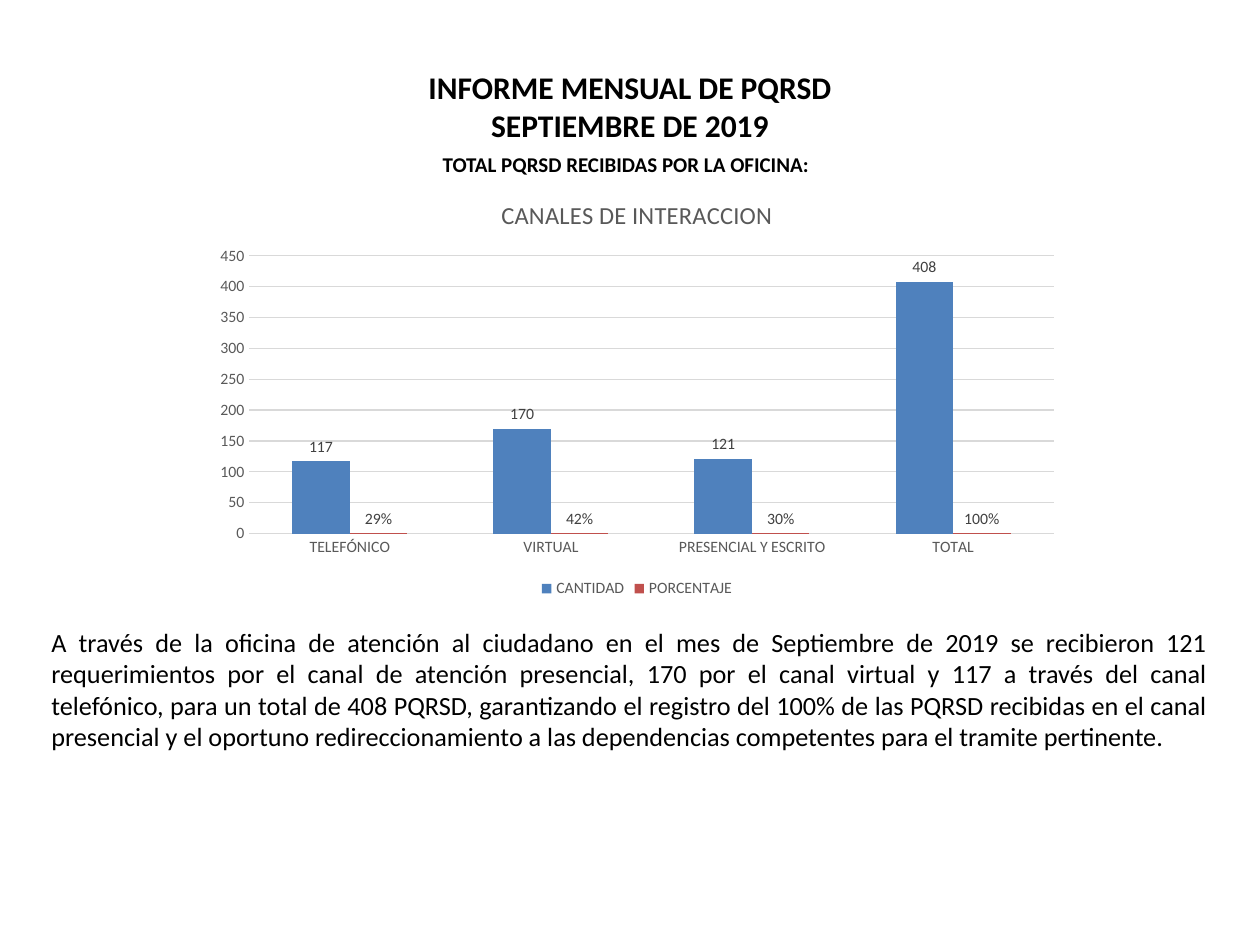
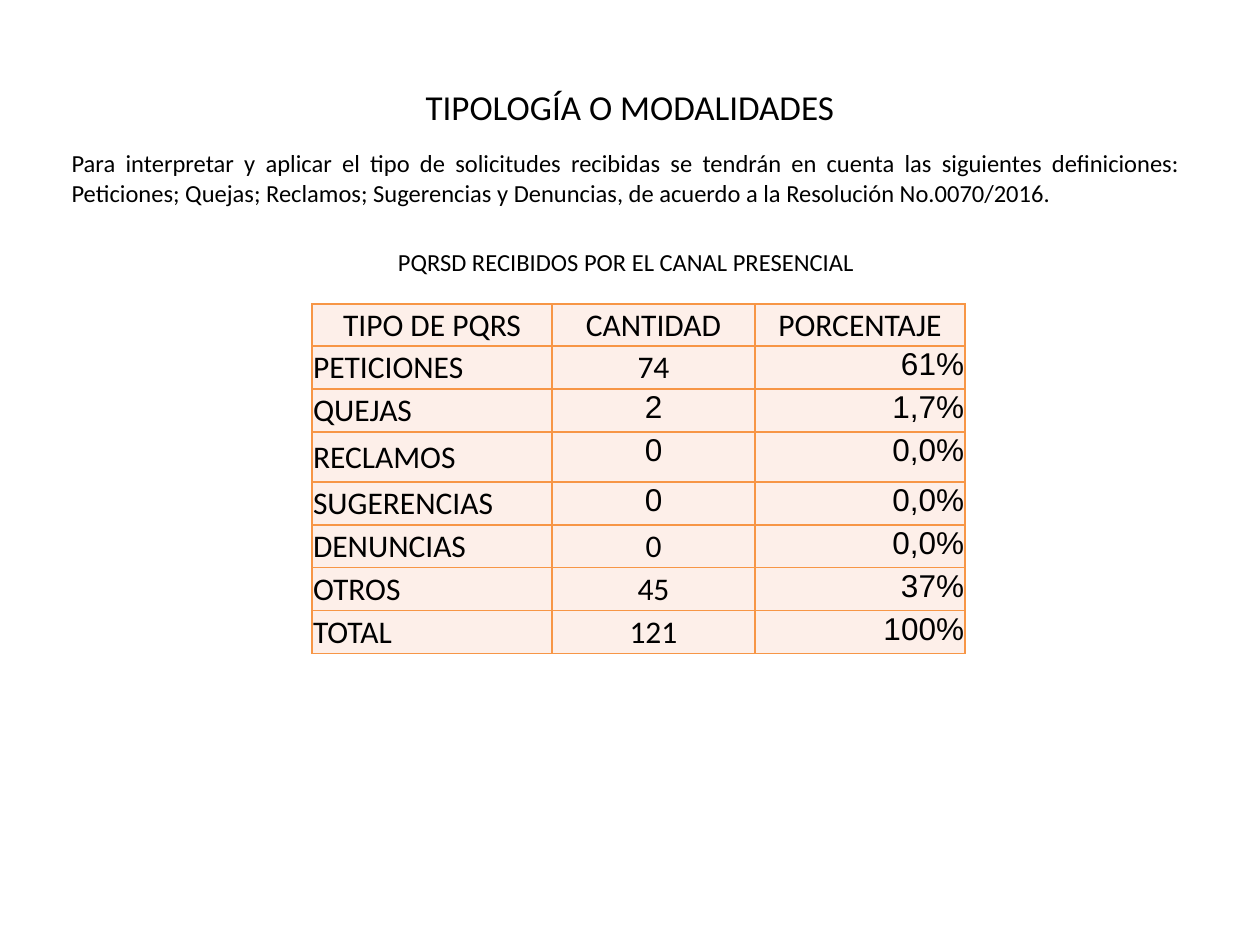
from lxml.etree import SubElement
from pptx import Presentation
from pptx.chart.data import CategoryChartData
from pptx.dml.color import RGBColor
from pptx.enum.chart import XL_CHART_TYPE, XL_LABEL_POSITION, XL_LEGEND_POSITION, XL_TICK_MARK
from pptx.enum.text import MSO_ANCHOR, MSO_AUTO_SIZE, PP_ALIGN
from pptx.oxml.ns import qn
from pptx.util import Pt

EMU_PER_PX = 914400 / 126
FONT = "Calibri"
FIGURE_FONT = "Arial"
COLORS = {
    "text": "000000",
    "chart_text": "595959",
    "label": "404040",
    "grid": "D9D9D9",
    "quantity": "4F81BD",
    "percentage": "C0504D",
    "border": "F79646",
    "cell": "FDEFE9",
}


def px(length):
    return round(length * EMU_PER_PX)


def color(name):
    return RGBColor.from_string(COLORS[name])


def style_font(font, size, color_name="text", name=FONT, bold=False):
    font.name = name
    font.size = Pt(size)
    font.bold = bold
    font.color.rgb = color(color_name)


def place(shape, left, top, width, height):
    shape.left, shape.top = px(left), px(top)
    shape.width, shape.height = px(width), px(height)


def add_slide(presentation, title, title_box, title_size, bold=False):
    slide = presentation.slides.add_slide(presentation.slide_layouts[1])
    place(slide.shapes.title, *title_box)
    frame = slide.shapes.title.text_frame
    frame.text = title
    frame.auto_size = MSO_AUTO_SIZE.NONE
    frame.vertical_anchor = MSO_ANCHOR.MIDDLE
    paragraph = frame.paragraphs[0]
    paragraph.alignment = PP_ALIGN.CENTER
    style_font(paragraph.font, title_size, bold=bold)
    return slide


def fill_body(slide, box, lines, size, bold=False, gap=0):
    body = slide.placeholders[1]
    place(body, *box)
    frame = body.text_frame
    frame.text = "\n".join(text for text, _ in lines)
    frame.auto_size = MSO_AUTO_SIZE.NONE
    for index, (paragraph, (_, alignment)) in enumerate(zip(frame.paragraphs, lines)):
        properties = paragraph._p.get_or_add_pPr()
        properties.set("marL", "0")
        properties.set("indent", "0")
        SubElement(properties, qn("a:buNone"))
        paragraph.alignment = alignment
        paragraph.space_before = Pt(gap if index else 0)
        style_font(paragraph.font, size, bold=bold)


def add_text(slide, box, text, size):
    frame = slide.shapes.add_textbox(*map(px, box)).text_frame
    frame.word_wrap = True
    frame.text = text
    paragraph = frame.paragraphs[0]
    paragraph.alignment = PP_ALIGN.JUSTIFY
    style_font(paragraph.font, size)


def style_axis(axis):
    axis.major_tick_mark = XL_TICK_MARK.NONE
    axis.minor_tick_mark = XL_TICK_MARK.NONE
    axis.format.line.fill.background()
    style_font(axis.tick_labels.font, 9, "chart_text")


def add_column_chart(slide, box, title, categories, series_rows):
    data = CategoryChartData()
    data.categories = categories
    for name, values, number_format, _ in series_rows:
        data.add_series(name, values, number_format)
    chart = slide.shapes.add_chart(XL_CHART_TYPE.COLUMN_CLUSTERED, *map(px, box), data).chart
    style_font(chart.font, 10)

    chart.has_title = True
    chart.chart_title.text_frame.text = title
    style_font(chart.chart_title.text_frame.paragraphs[0].font, 14, "chart_text")
    chart.has_legend = True
    chart.legend.position = XL_LEGEND_POSITION.BOTTOM
    chart.legend.include_in_layout = False
    style_font(chart.legend.font, 9, "chart_text")

    style_axis(chart.category_axis)
    style_axis(chart.value_axis)
    grid_line = chart.value_axis.major_gridlines.format.line
    grid_line.color.rgb = color("grid")
    grid_line.width = Pt(0.75)

    plot = chart.plots[0]
    plot.gap_width = 150
    plot.overlap = 0
    plot.vary_by_categories = False
    for series, (_, _, number_format, color_name) in zip(plot.series, series_rows):
        series.format.fill.solid()
        series.format.fill.fore_color.rgb = color(color_name)
        labels = series.data_labels
        labels.show_value = True
        labels.position = XL_LABEL_POSITION.OUTSIDE_END
        labels.number_format = number_format
        labels.number_format_is_linked = False
        style_font(labels.font, 9, "label")


def add_borders(cell):
    properties = cell._tc.get_or_add_tcPr()
    for side in ("lnL", "lnR", "lnT", "lnB"):
        line = SubElement(properties, qn(f"a:{side}"), w=str(Pt(1)))
        fill = SubElement(line, qn("a:solidFill"))
        SubElement(fill, qn("a:srgbClr"), val=COLORS["border"])


def fill_cell(cell, text, alignment, is_figure):
    add_borders(cell)
    cell.fill.solid()
    cell.fill.fore_color.rgb = color("cell")
    cell.margin_left = cell.margin_right = cell.margin_top = px(1)
    cell.margin_bottom = 0
    cell.vertical_anchor = MSO_ANCHOR.TOP if is_figure else MSO_ANCHOR.MIDDLE
    cell.text = text
    paragraph = cell.text_frame.paragraphs[0]
    paragraph.alignment = alignment
    style_font(paragraph.font, 18, name=FIGURE_FONT if is_figure else FONT)


def add_type_table(slide, left, top, column_widths, row_heights, rows, arial_quantities):
    table = slide.shapes.add_table(
        len(rows), len(column_widths), px(left), px(top),
        px(sum(column_widths)), px(sum(row_heights)),
    ).table
    table.first_row = False
    table.horz_banding = False
    for column, width in zip(table.columns, column_widths):
        column.width = px(width)
    for row, height in zip(table.rows, row_heights):
        row.height = px(height)
    alignments = (PP_ALIGN.LEFT, PP_ALIGN.CENTER, PP_ALIGN.RIGHT)
    for row_index, values in enumerate(rows):
        for column_index, text in enumerate(values):
            is_header = row_index == 0
            is_figure = not is_header and (
                column_index == 2 or column_index == 1 and values[0] in arial_quantities
            )
            alignment = PP_ALIGN.CENTER if is_header else alignments[column_index]
            fill_cell(table.cell(row_index, column_index), text, alignment, is_figure)


def add_channels_slide(presentation):
    slide = add_slide(
        presentation, "INFORME MENSUAL DE PQRSD\vSEPTIEMBRE DE 2019",
        (63, 42, 1134, 127), 18, bold=True,
    )
    fill_body(
        slide, (83, 145, 1086, 33),
        [("TOTAL PQRSD RECIBIDAS POR LA OFICINA:", PP_ALIGN.CENTER)], 12, bold=True,
    )
    add_text(
        slide, (39, 620, 1181, 140),
        "A través de la oficina de atención al ciudadano en el mes de Septiembre de 2019 "
        "se recibieron 121 requerimientos por el canal de atención presencial, 170 por el "
        "canal virtual y 117 a través del canal telefónico, para un total de 408 PQRSD, "
        "garantizando el registro del 100% de las PQRSD recibidas en el canal presencial "
        "y el oportuno redireccionamiento a las dependencias competentes para el tramite "
        "pertinente.", 15,
    )
    add_column_chart(
        slide, (203, 178, 868, 425), "CANALES DE INTERACCION",
        ["TELEFÓNICO", "VIRTUAL", "PRESENCIAL Y ESCRITO", "TOTAL"],
        [
            ("CANTIDAD", (117, 170, 121, 408), "General", "quantity"),
            ("PORCENTAJE", (0.29, 0.42, 0.3, 1), "0%", "percentage"),
        ],
    )


def add_types_slide(presentation):
    slide = add_slide(presentation, "TIPOLOGÍA O MODALIDADES", (63, 60, 1134, 92), 20)
    fill_body(
        slide, (59, 142, 1134, 617),
        [
            ("Para interpretar y aplicar el tipo de solicitudes recibidas se tendrán en "
             "cuenta las siguientes definiciones: Peticiones; Quejas; Reclamos; Sugerencias "
             "y Denuncias, de acuerdo a la Resolución No.0070/2016.", PP_ALIGN.JUSTIFY),
            ("PQRSD RECIBIDOS POR EL CANAL PRESENCIAL", PP_ALIGN.CENTER),
        ], 14, gap=23,
    )
    add_type_table(
        slide, 312, 304, (240, 203, 210), (42, 43, 43, 50, 43, 43, 43, 43),
        [
            ("TIPO DE PQRS", "CANTIDAD", "PORCENTAJE"),
            ("PETICIONES", "74", "61%"),
            ("QUEJAS", "2", "1,7%"),
            ("RECLAMOS", "0", "0,0%"),
            ("SUGERENCIAS", "0", "0,0%"),
            ("DENUNCIAS", "0", "0,0%"),
            ("OTROS", "45", "37%"),
            ("TOTAL", "121", "100%"),
        ],
        {"QUEJAS", "RECLAMOS", "SUGERENCIAS"},
    )


def main():
    presentation = Presentation()
    presentation.slide_width, presentation.slide_height = px(1260), px(945)
    add_channels_slide(presentation)
    add_types_slide(presentation)
    presentation.save("out.pptx")


if __name__ == "__main__":
    main()
